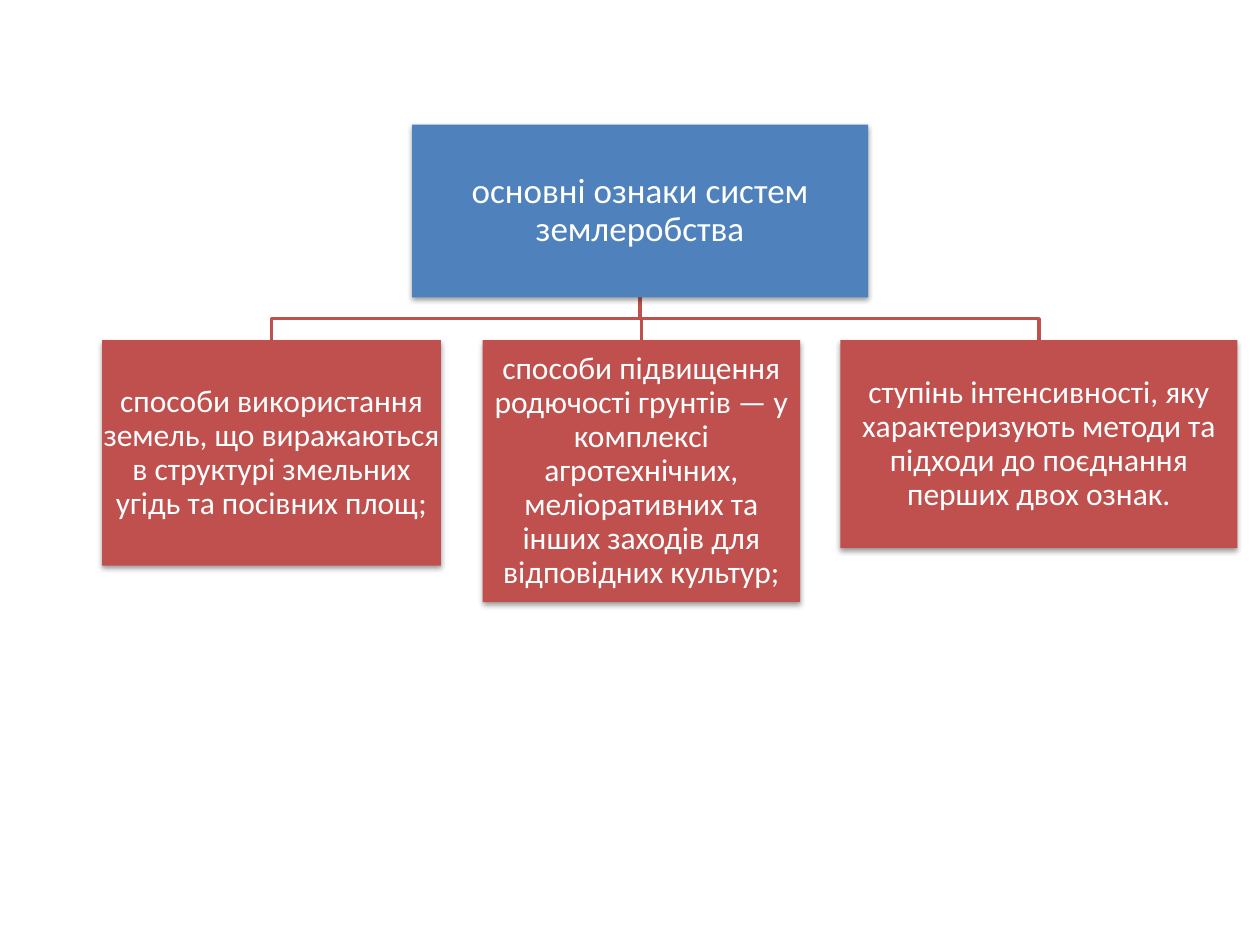
"""Build a slide with a chart of the main features of farming systems."""
from lxml.etree import SubElement as Sub
from pptx import Presentation
from pptx.dml.color import RGBColor as RGB
from pptx.enum.shapes import MSO_SHAPE as Shape
from pptx.enum.text import MSO_ANCHOR as Anchor, PP_ALIGN as Align
from pptx.oxml.ns import qn
from pptx.util import Inches, Pt

BLUE, RED, WHITE, BLACK = "4F81BD", "C0504D", "FFFFFF", "000000"


def tint(fill, hue):
    fill.solid()
    fill.fore_color.rgb = RGB.from_string(hue)


def add_box(left, top, width, height, hue, size, text):
    box = slide.shapes.add_shape(
        Shape.RECTANGLE, Inches(left), Inches(top), Inches(width), Inches(height))
    tint(box.fill, hue)
    box.line.fill.background()
    box.shadow.inherit = False
    effects = box._element.spPr.find(qn("a:effectLst"))
    shade = Sub(effects, qn("a:outerShdw"), blurRad="40000", dist="20000",
                dir="5400000", rotWithShape="0")
    black = Sub(shade, qn("a:srgbClr"), val=BLACK)
    Sub(black, qn("a:alpha"), val="38000")

    frame = box.text_frame
    frame.word_wrap = True
    frame.vertical_anchor = Anchor.MIDDLE
    frame.margin_left = frame.margin_right = Inches(0.01)
    frame.margin_top = frame.margin_bottom = Inches(0.01)
    frame.text = text
    para = frame.paragraphs[0]
    para.alignment = Align.CENTER
    para.line_spacing = 0.9
    font = para.runs[0].font
    font.name, font.size = "Calibri", Pt(size)
    tint(font.fill, WHITE)


deck = Presentation()
deck.slide_width, deck.slide_height = Inches(10), Inches(7.5)
slide = deck.slides.add_slide(deck.slide_layouts[6])

left, top, width, height = 3.27, 0.99, 3.62, 1.37
stem, base, row = left + width / 2, top + height, 2.7
bend = (base + row) / 2

signs = [
    (0.81, 2.69, 1.79, "способи використання земель, що виражаються в структурі "
                       "змельних угідь та посівних площ;"),
    (3.83, 2.52, 2.08, "способи підвищення родючості грунтів — у комплексі "
                       "агротехнічних, меліоративних та інших заходів для "
                       "відповідних культур;"),
    (6.67, 3.15, 1.65, "ступінь інтенсивності, яку характеризують методи та "
                       "підходи до поєднання перших двох ознак."),
]

for x, wide, tall, text in signs:
    mid = x + wide / 2
    pen = slide.shapes.build_freeform(Inches(stem), Inches(base))
    bends = [(stem, bend), (mid, bend), (mid, row)]
    pen.add_line_segments([(Inches(a), Inches(b)) for a, b in bends], close=False)
    link = pen.convert_to_shape()
    link.fill.background()
    link.shadow.inherit = False
    link.line.width = Pt(2)
    tint(link.line.fill, RED)

add_box(left, top, width, height, BLUE, 20, "основні ознаки систем землеробства")
for x, wide, tall, text in signs:
    add_box(x, row, wide, tall, RED, 18, text)

deck.save("out.pptx")
